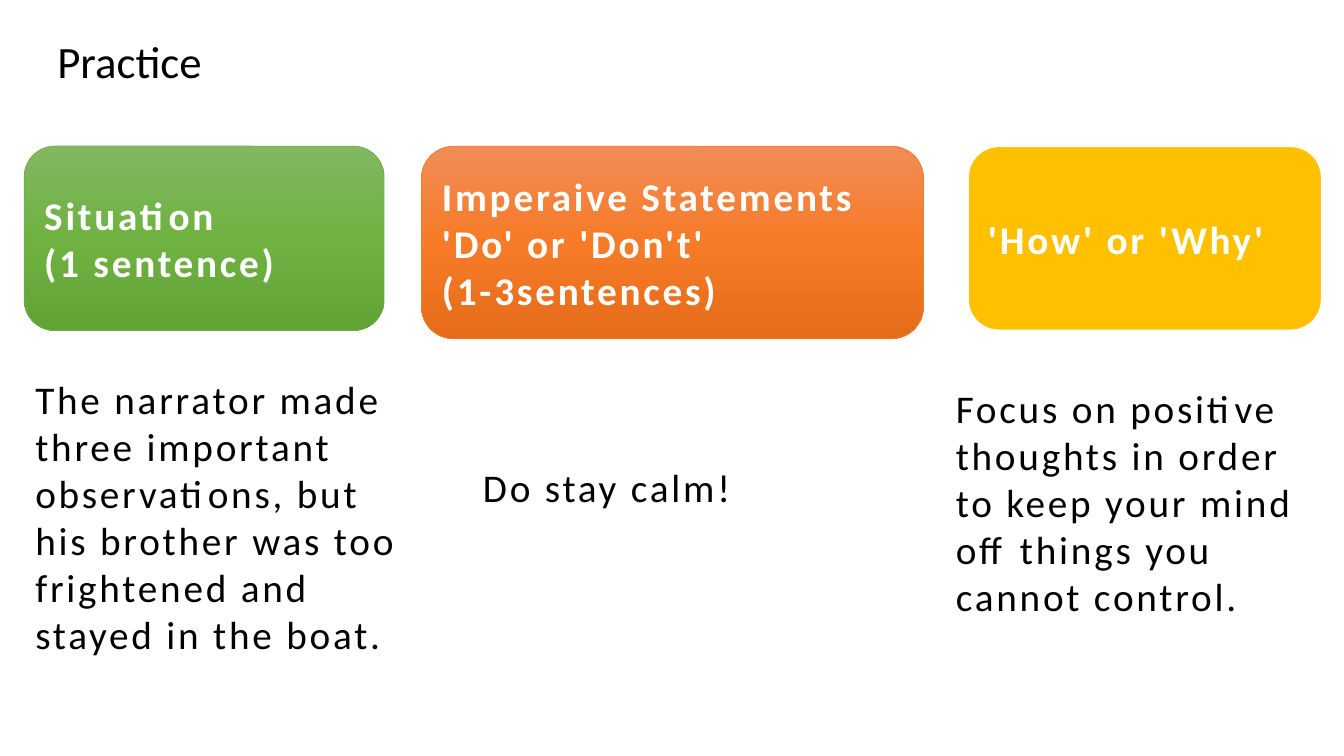
from copy import deepcopy
from dataclasses import dataclass

from pptx import Presentation
from pptx.dml.color import RGBColor as RGB
from pptx.enum.shapes import MSO_SHAPE as SHAPE
from pptx.enum.text import MSO_ANCHOR as ANCHOR, PP_ALIGN as ALIGN
from pptx.oxml.ns import qn
from pptx.util import Emu, Pt

PX = 9144
FONT = "Calibri"
COLORS = {
    "text": "000000",
    "white": "FFFFFF",
    "green_line": "70AD47",
    "orange_line": "ED7D31",
    "gold": "FFC000",
}
GRADIENTS = {
    "green": ("81B861", "6FB242", "62A336"),
    "orange": ("F18C57", "F67B28", "E56C19"),
}
TITLE_INSETS = (10, 5, 10, 5)
BODY_INSETS = (11, 4, 8, 4)


@dataclass(frozen=True)
class Box:
    x: int
    y: int
    w: int
    h: int

    def emu(self) -> tuple[Emu, ...]:
        return tuple(Emu(v * PX) for v in (self.x, self.y, self.w, self.h))


@dataclass(frozen=True)
class Header:
    box: Box
    lines: tuple[str, ...]
    fill: str
    line: str
    line_pt: float


@dataclass(frozen=True)
class Answer:
    box: Box
    text: str


HEADERS = (
    Header(Box(24, 145, 357, 183), ("Situation", "(1 sentence)"),
           "green", "green_line", 0.5),
    Header(Box(418, 145, 498, 191),
           ("Imperaive Statements", "'Do' or 'Don't'", "(1-3sentences)"),
           "orange", "orange_line", 0.5),
    Header(Box(960, 145, 351, 183), ("'How' or 'Why'",),
           "gold", "white", 1.5),
)
ANSWERS = (
    Answer(Box(24, 368, 398, 288),
           "The narrator made three important observations, but his brother "
           "was too frightened and stayed in the boat."),
    Answer(Box(468, 368, 398, 230), "Do stay calm!"),
    Answer(Box(937, 368, 374, 259),
           "Focus on positive thoughts in order to keep your mind off things "
           "you cannot control."),
)


def rgb(name: str) -> RGB:
    return RGB.from_string(COLORS[name])


def write(sp, lines: tuple[str, ...], color: str, size: int = 28,
          bold: bool = False, tracking: int = 200,
          insets: tuple[int, ...] = BODY_INSETS,
          spacing: float = 1.0) -> None:
    tf = sp.text_frame
    tf.word_wrap = True
    tf.vertical_anchor = ANCHOR.MIDDLE
    (tf.margin_left, tf.margin_top,
     tf.margin_right, tf.margin_bottom) = (Emu(v * PX) for v in insets)
    for i, line in enumerate(lines):
        p = tf.add_paragraph() if i else tf.paragraphs[0]
        p.alignment = ALIGN.LEFT
        p.line_spacing = spacing
        r = p.add_run()
        r.text = line
        r.font.name = FONT
        r.font.size = Pt(size)
        r.font.bold = bold
        r.font.color.rgb = rgb(color)
        if tracking:
            r._r.get_or_add_rPr().set("spc", str(tracking))


def fill_gradient(sp, colors: tuple[str, ...]) -> None:
    sp.fill.gradient()
    sp.fill.gradient_angle = 270
    stops = next(sp.element.iter(qn("a:gsLst")))
    stops.insert(1, deepcopy(stops[0]))
    for i, (stop, color) in enumerate(zip(sp.fill.gradient_stops, colors)):
        stop.position = i / (len(colors) - 1)
        stop.color.rgb = RGB.from_string(color)


def add_header(s, header: Header) -> None:
    sp = s.shapes.add_shape(SHAPE.ROUNDED_RECTANGLE, *header.box.emu())
    sp.shadow.inherit = False
    if header.fill in GRADIENTS:
        fill_gradient(sp, GRADIENTS[header.fill])
    else:
        sp.fill.solid()
        sp.fill.fore_color.rgb = rgb(header.fill)
    sp.line.color.rgb = rgb(header.line)
    sp.line.width = Pt(header.line_pt)
    write(sp, header.lines, "white", bold=True)


def add_answer(s, answer: Answer) -> None:
    sp = s.shapes.add_textbox(*answer.box.emu())
    write(sp, (answer.text,), "text")


def main() -> None:
    prs = Presentation()
    prs.slide_width, prs.slide_height = Emu(1333 * PX), Emu(750 * PX)
    s = prs.slides.add_slide(prs.slide_layouts[6])
    title = s.shapes.add_textbox(*Box(47, 28, 286, 71).emu())
    write(title, ("Practice",), "text", size=32, tracking=0,
          insets=TITLE_INSETS, spacing=0.9)
    for header in HEADERS:
        add_header(s, header)
    for answer in ANSWERS:
        add_answer(s, answer)
    prs.save("out.pptx")


if __name__ == "__main__":
    main()
